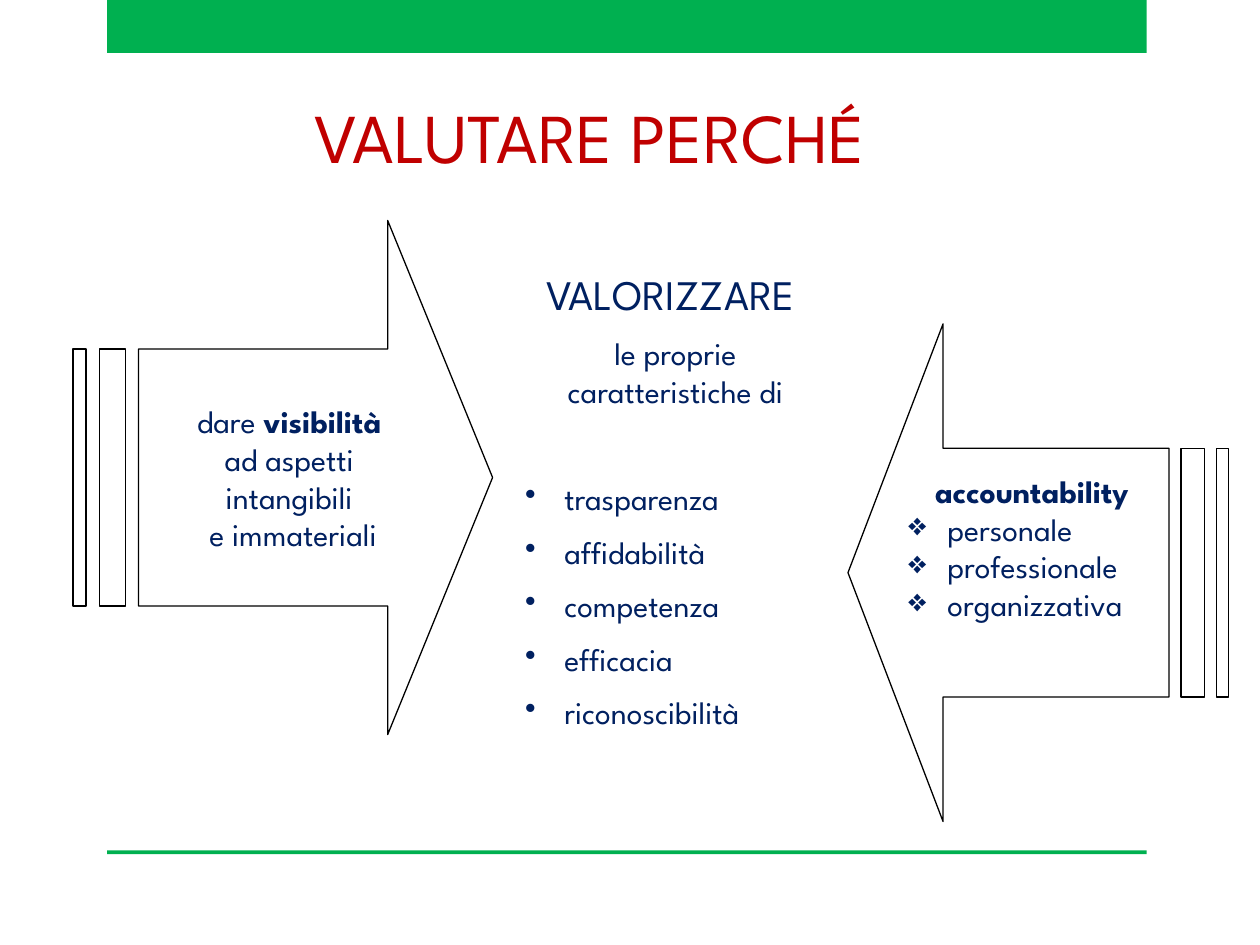
from lxml import etree
from pptx import Presentation
from pptx import util as u
from pptx.dml.color import RGBColor
from pptx.enum import shapes, text
from pptx.oxml.ns import qn

COLORS = {"green": "00B050", "red": "C00000", "navy": "002060", "black": "000000"}
FONT = "League Spartan"
CENTER = text.PP_ALIGN.CENTER
LEFT = text.PP_ALIGN.LEFT

BARS = [(0.85, 0, 8.25, 0.42), (0.85, 6.75, 8.25, 0.03)]
TITLE = "VALUTARE PERCHÉ"
VISIBILITY = [
    [("dare ", False), ("visibilità", True)],
    [("ad aspetti", False)],
    [("intangibili", False)],
    [(" e immateriali", False)],
]
ACCOUNTABILITY = "accountability"
LEVELS = ["personale", "professionale", "organizzativa"]
HEADING = "VALORIZZARE "
LEAD = "le proprie caratteristiche di"
QUALITIES = ["trasparenza", "affidabilità", "competenza", "efficacia", "riconoscibilità"]

STRIPES = [(0, 1 / 32), (1 / 16, 1 / 8)]
SHAFT_START, HEAD_START = 5 / 32, 3 / 4


def paint(item, name):
    item.fill.solid()
    item.fill.fore_color.rgb = RGBColor.from_string(COLORS[name])


def add_bar(page, place):
    bar = page.shapes.add_shape(shapes.MSO_SHAPE.RECTANGLE, *map(u.Inches, place))
    bar.shadow.inherit = False
    paint(bar, "green")
    bar.line.fill.background()


def add_striped_arrow(page, left, top, width, height, margins, mirrored=False):
    def point(across, down):
        across = 1 - across if mirrored else across
        return u.Inches(left + across * width), u.Inches(top + down * height)

    head = [(HEAD_START, 0), (HEAD_START, 0.25), (SHAFT_START, 0.25),
            (SHAFT_START, 0.75), (HEAD_START, 0.75), (HEAD_START, 1), (1, 0.5)]
    bands = [[(a, 0.25), (a, 0.75), (b, 0.75), (b, 0.25)] for a, b in STRIPES]
    builder = page.shapes.build_freeform(*point(*head[0]))
    for number, outline in enumerate([head] + bands):
        corners = [point(*corner) for corner in outline]
        if number:
            builder.move_to(*corners[0])
        builder.add_line_segments(corners[1:], close=True)
    arrow = builder.convert_to_shape()
    arrow.shadow.inherit = False
    arrow.fill.background()
    arrow.line.color.rgb = RGBColor.from_string(COLORS["black"])
    arrow.line.width = u.Pt(0.75)
    frame = arrow.text_frame
    frame.word_wrap = True
    frame.vertical_anchor = text.MSO_ANCHOR.MIDDLE
    frame.margin_left, frame.margin_right, frame.margin_bottom = map(u.Inches, margins)
    frame.margin_top = u.Inches(0.05)
    return frame


def add_box(page, place, wrap):
    frame = page.shapes.add_textbox(*map(u.Inches, place)).text_frame
    frame.word_wrap = wrap
    return frame


def add_para(frame, runs, size=18, color="navy", align=CENTER, before=0, bullet=None):
    first = frame.paragraphs[0]
    para = frame.add_paragraph() if first.runs else first
    para.alignment = align
    para.space_before = u.Pt(before)
    if bullet:
        props = para._p.get_or_add_pPr()
        props.set("marL", str(u.Inches(0.31)))
        props.set("indent", str(-u.Inches(0.31)))
        etree.SubElement(props, qn("a:buChar")).set("char", bullet)
    for words, bold in runs:
        span = para.add_run()
        span.text = words
        span.font.name = FONT
        span.font.size = u.Pt(size)
        span.font.bold = bold
        span.font.color.rgb = RGBColor.from_string(COLORS[color])


def main():
    deck = Presentation()
    deck.slide_width, deck.slide_height = u.Inches(10), u.Inches(7.5)
    page = deck.slides.add_slide(deck.slide_layouts[6])

    for place in BARS:
        add_bar(page, place)

    title = add_box(page, (2.4, 0.69, 5.21, 0.77), False)
    add_para(title, [(TITLE, False)], 40, "red", LEFT)

    visibility = add_striped_arrow(page, 0.58, 1.75, 3.33, 4.08, (0.2, 0.1, 0.05))
    for runs in VISIBILITY:
        add_para(visibility, runs)

    account = add_striped_arrow(page, 6.73, 2.57, 3.02, 3.95, (0.48, 0.58, 0.45), True)
    add_para(account, [(ACCOUNTABILITY, True)])
    for level in LEVELS:
        add_para(account, [(level, False)], align=LEFT, bullet="❖")

    values = add_box(page, (4.07, 2.08, 2.58, 3.99), True)
    add_para(values, [(HEADING, False)], 24)
    add_para(values, [(LEAD, False)], before=9)
    for number, quality in enumerate(QUALITIES):
        add_para(values, [(quality, False)], align=LEFT,
                 before=9 if number else 39.5, bullet="•")

    deck.save("out.pptx")


if __name__ == "__main__":
    main()
